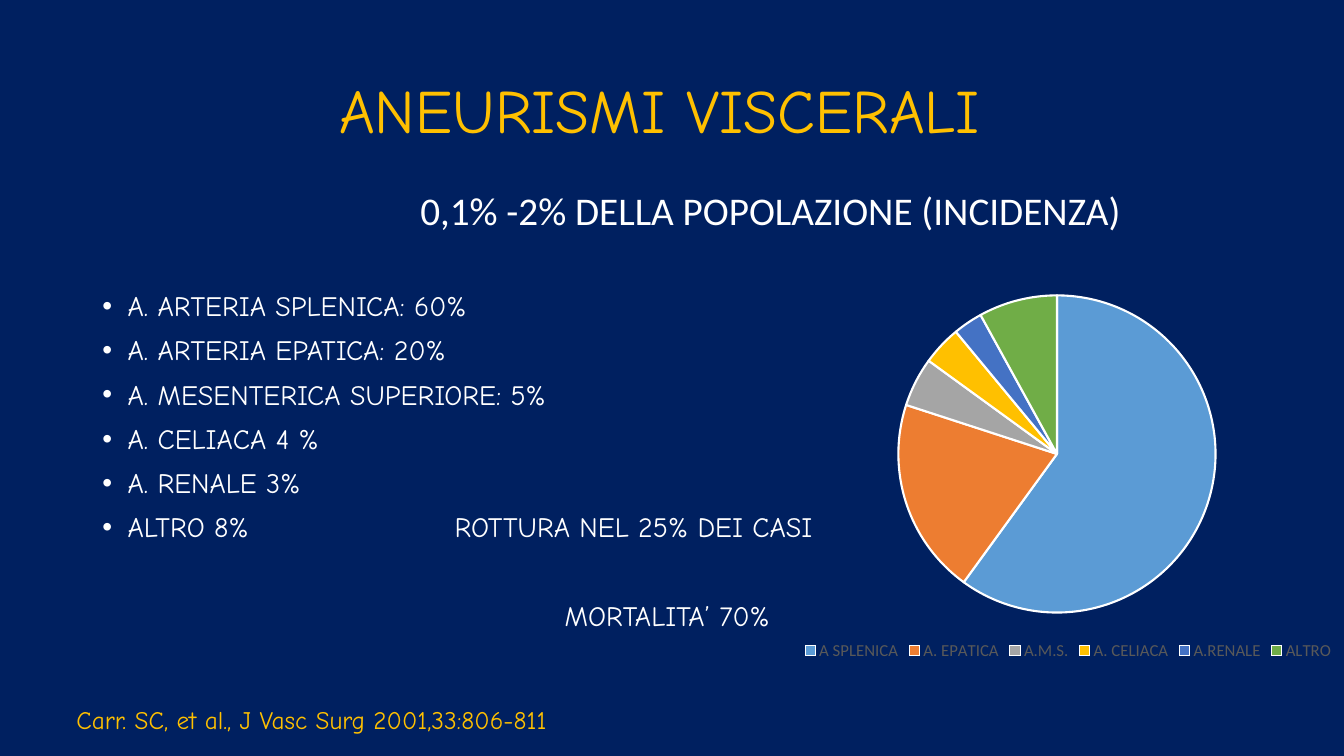
from lxml import etree
from pptx import Presentation
from pptx.chart.data import CategoryChartData
from pptx.dml.color import RGBColor
from pptx.enum.chart import XL_CHART_TYPE, XL_LEGEND_POSITION
from pptx.enum.text import MSO_ANCHOR, MSO_AUTO_SIZE, PP_ALIGN
from pptx.oxml.ns import qn
from pptx.util import Pt

PIE = XL_CHART_TYPE.PIE
BOTTOM = XL_LEGEND_POSITION.BOTTOM
MIDDLE, TOP = MSO_ANCHOR.MIDDLE, MSO_ANCHOR.TOP
NO_FIT, GROW = MSO_AUTO_SIZE.NONE, MSO_AUTO_SIZE.SHAPE_TO_FIT_TEXT
LEFT, CENTER = PP_ALIGN.LEFT, PP_ALIGN.CENTER

COMIC, CALIBRI = "Comic Neue", "Calibri"
NAVY, GOLD, WHITE, GRAY = "002060", "FFC000", "FFFFFF", "595959"

ARTERIES = [
    "A. ARTERIA SPLENICA: 60%",
    "A. ARTERIA EPATICA: 20%",
    "A. MESENTERICA SUPERIORE: 5%",
    "A. CELIACA 4 %",
    "A. RENALE 3%",
    "ALTRO 8%\tROTTURA NEL 25% DEI CASI",
]
SHARES = [
    ("A SPLENICA", 60, "5B9BD5"),
    ("A. EPATICA", 20, "ED7D31"),
    ("A.M.S.", 5, "A5A5A5"),
    ("A. CELIACA", 4, "FFC000"),
    ("A.RENALE", 3, "4472C4"),
    ("ALTRO", 8, "70AD47"),
]


def rgb(value):
    return RGBColor.from_string(value)


def place(sp, box):
    sp.left, sp.top, sp.width, sp.height = (Pt(v) for v in box)


def add_run(p, text, size, font, color):
    r = p.add_run()
    r.text = text
    r.font.size = Pt(size)
    r.font.name = font
    r.font.color.rgb = rgb(color)


def set_indent(p, margin, hanging=0, bullet=None, tab=None):
    pPr = p._p.get_or_add_pPr()
    pPr.set("marL", str(Pt(margin)))
    pPr.set("indent", str(Pt(-hanging)))
    if bullet:
        etree.SubElement(pPr, qn("a:buFont"), typeface="Arial")
        etree.SubElement(pPr, qn("a:buChar"), char=bullet)
    else:
        etree.SubElement(pPr, qn("a:buNone"))
    if tab:
        tabs = etree.SubElement(pPr, qn("a:tabLst"))
        etree.SubElement(tabs, qn("a:tab"), pos=str(Pt(tab)), algn="l")


def format_line(p, align, before=10):
    p.alignment = align
    p.line_spacing = 0.9
    p.space_before = Pt(before)


def add_title(s, box):
    sp = s.shapes.title
    place(sp, box)
    tf = sp.text_frame
    tf.auto_size = NO_FIT
    tf.vertical_anchor = MIDDLE
    p = tf.paragraphs[0]
    format_line(p, LEFT, 0)
    set_indent(p, 169)
    add_run(p, "ANEURISMI VISCERALI", 44, COMIC, GOLD)


def add_body(s, box):
    sp = s.placeholders[1]
    place(sp, box)
    tf = sp.text_frame
    tf.auto_size = NO_FIT
    tf.vertical_anchor = TOP
    p = tf.paragraphs[0]
    format_line(p, LEFT)
    set_indent(p, 227)
    add_run(p, "0,1% -2% DELLA POPOLAZIONE (INCIDENZA)", 28, CALIBRI, WHITE)
    for i, artery in enumerate(ARTERIES):
        p = tf.add_paragraph()
        format_line(p, LEFT, 10 if i else 42)
        set_indent(p, 18, 18, "•", 251.5 if "\t" in artery else None)
        add_run(p, artery, 20, COMIC, WHITE)
    p = tf.add_paragraph()
    format_line(p, CENTER, 41.5)
    set_indent(p, 0)
    add_run(p, "MORTALITA’ 70% ", 20, COMIC, WHITE)


def set_plot_layout(chart, x, y, w, h):
    area = chart._chartSpace.chart.plotArea
    for old in area.findall(qn("c:layout")):
        area.remove(old)
    layout = etree.Element(qn("c:layout"))
    area.insert(0, layout)
    manual = etree.SubElement(layout, qn("c:manualLayout"))
    settings = [("layoutTarget", "inner"), ("xMode", "edge"), ("yMode", "edge"),
                ("x", x), ("y", y), ("w", w), ("h", h)]
    for tag, value in settings:
        etree.SubElement(manual, qn("c:" + tag), val=str(value))


def add_pie(s, box):
    data = CategoryChartData()
    data.categories = [name for name, _, _ in SHARES]
    data.add_series("Series 1", [value for _, value, _ in SHARES])
    chart = s.shapes.add_chart(PIE, *(Pt(v) for v in box), data).chart
    chart.has_title = False
    chart.font.size = Pt(10)
    chart.font.name = CALIBRI
    chart.has_legend = True
    legend = chart.legend
    legend.position = BOTTOM
    legend.include_in_layout = False
    legend.font.size = Pt(12)
    legend.font.name = CALIBRI
    legend.font.color.rgb = rgb(GRAY)
    plot = chart.plots[0]
    plot.vary_by_categories = True
    for i, (_, _, color) in enumerate(SHARES):
        fmt = plot.series[0].points[i].format
        fmt.fill.solid()
        fmt.fill.fore_color.rgb = rgb(color)
        fmt.line.color.rgb = rgb(WHITE)
        fmt.line.width = Pt(1.5)
    set_plot_layout(chart, 0.31, 0.04, 0.355, 0.824)


def add_citation(s, box):
    tf = s.shapes.add_textbox(*(Pt(v) for v in box)).text_frame
    tf.word_wrap = False
    tf.auto_size = GROW
    add_run(tf.paragraphs[0], "Carr. SC, et al., J Vasc Surg 2001,33:806-811", 18, COMIC, GOLD)


def main():
    prs = Presentation()
    prs.slide_width, prs.slide_height = Pt(960), Pt(540)
    s = prs.slides.add_slide(prs.slide_layouts[1])
    s.background.fill.solid()
    s.background.fill.fore_color.rgb = rgb(NAVY)
    add_title(s, (66, 29, 828, 104))
    add_body(s, (66, 133, 828, 343))
    add_pie(s, (443, 200, 640, 275))
    add_citation(s, (47.5, 499.5, 400, 29))
    prs.save("out.pptx")


if __name__ == "__main__":
    main()
